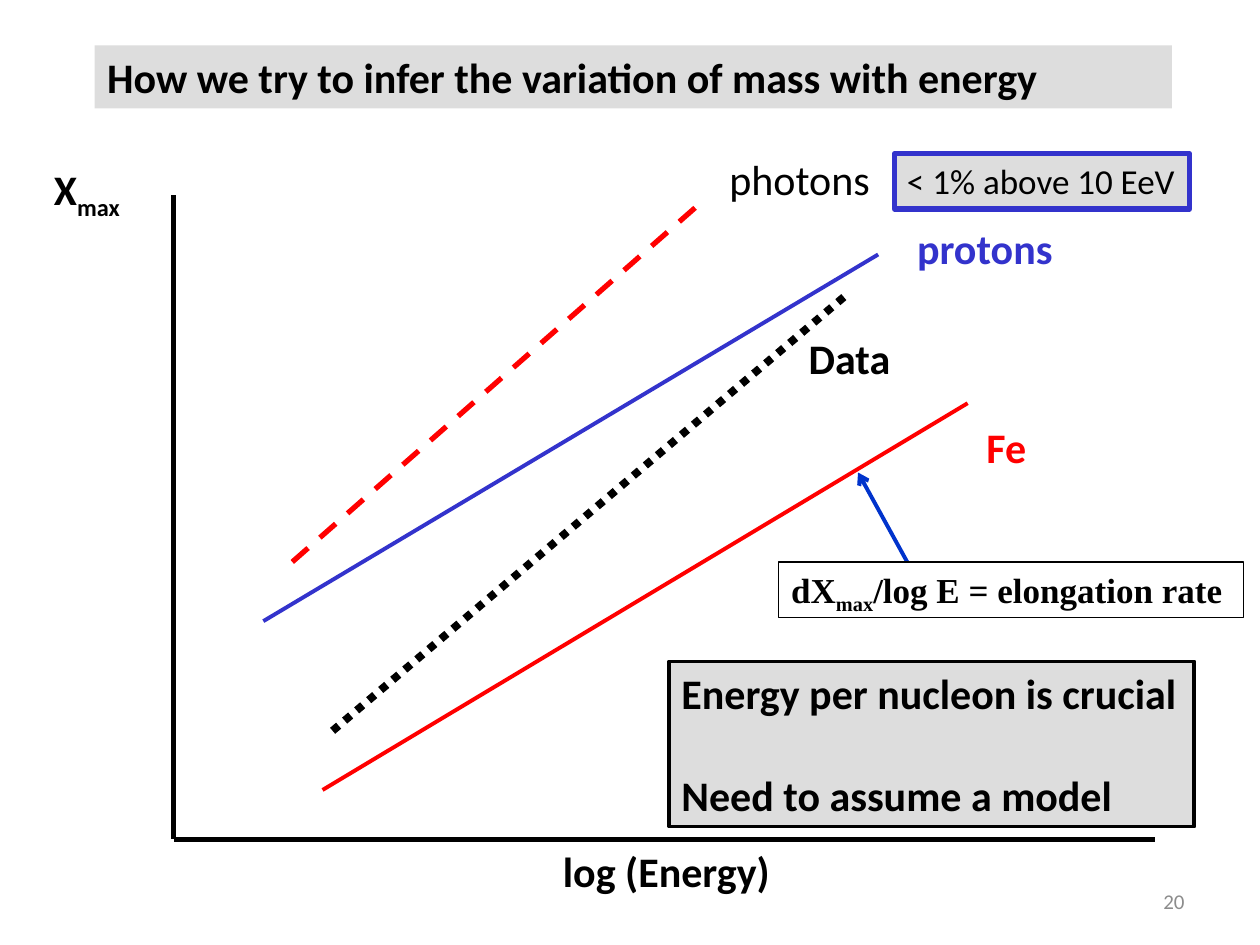
"""Build the slide on inferring the variation of mass with energy."""
from dataclasses import dataclass
from typing import Optional

from lxml import etree
from pptx import Presentation
from pptx import util as u
from pptx.dml.color import RGBColor
from pptx.enum import dml, shapes, text
from pptx.oxml.ns import qn

PX = 9144
COLORS = {
    "black": "000000",
    "blue": "3333CC",
    "arrow": "0033CC",
    "red": "FF0000",
    "panel": "DDDDDD",
    "number": "8C8C8C",
}


@dataclass
class Line:
    start: tuple[int, int]
    end: tuple[int, int]
    color: str
    weight: float
    dash: Optional[dml.MSO_LINE] = None
    arrow: bool = False


@dataclass
class Label:
    box: tuple[int, int, int, int]
    paragraphs: list[list[str]]
    color: str = "black"
    size: int = 24
    bold: bool = True
    font: str = "Calibri"
    fill: Optional[str] = None
    border: Optional[str] = None
    weight: float = 0
    wrap: bool = False
    gap: float = 0
    align: text.PP_ALIGN = text.PP_ALIGN.LEFT
    anchor: text.MSO_ANCHOR = text.MSO_ANCHOR.TOP


TITLE = Label((75, 36, 855, 50),
              [["How we try to infer the variation of mass with energy"]],
              fill="panel", wrap=True)

LINES = [
    Line((138, 155), (138, 666), "black", 3),
    Line((138, 666), (917, 666), "black", 3),
    Line((209, 493), (697, 202), "blue", 2.25),
    Line((256, 627), (768, 320), "red", 2.25),
    Line((264, 580), (673, 233), "black", 4.5, dml.MSO_LINE.ROUND_DOT),
    Line((232, 446), (555, 162), "red", 3, dml.MSO_LINE.DASH),
    Line((720, 446), (681, 375), "arrow", 2.25, arrow=True),
]

LABELS = [
    Label((717, 695, 233, 40), [["20"]], "number", 12, False, wrap=True,
          align=text.PP_ALIGN.RIGHT, anchor=text.MSO_ANCHOR.MIDDLE),
    Label((569, 117, 139, 50), [["photons"]], bold=False),
    Label((718, 172, 144, 50), [["protons"]], "blue"),
    Label((773, 330, 59, 50), [["Fe"]], "red"),
    Label((632, 259, 93, 50), [["Data"]]),
    Label((437, 666, 214, 50), [["log (Energy)"]]),
    Label((33, 125, 87, 50), [["X", "max"]]),
    Label((531, 525, 417, 131),
          [["Energy per nucleon is crucial"], ["Need to assume a model"]],
          fill="panel", border="black", weight=2.25, wrap=True, gap=29.3),
    Label((710, 122, 234, 44), [["< 1% above 10 EeV"]], size=20, bold=False,
          fill="panel", border="blue", weight=3),
    Label((618, 446, 369, 44), [["dX", "max", "/log E = elongation rate"]],
          size=20, font="Times New Roman", border="black", weight=0.75),
]


def rgb(name: str) -> RGBColor:
    """Look up a colour by name."""
    return RGBColor.from_string(COLORS[name])


def fill_label(sp, label: Label) -> None:
    """Place a shape, style it and write its text."""
    sp.left, sp.top, sp.width, sp.height = (v * PX for v in label.box)
    if label.fill:
        sp.fill.solid()
        sp.fill.fore_color.rgb = rgb(label.fill)
    if label.border:
        sp.line.color.rgb = rgb(label.border)
        sp.line.width = u.Pt(label.weight)
    tf = sp.text_frame
    tf.word_wrap = label.wrap
    tf.auto_size = (text.MSO_AUTO_SIZE.NONE if label.wrap
                    else text.MSO_AUTO_SIZE.SHAPE_TO_FIT_TEXT)
    tf.vertical_anchor = label.anchor
    for i, runs in enumerate(label.paragraphs):
        p = tf.add_paragraph() if i else tf.paragraphs[0]
        p.alignment = label.align
        p.space_before = u.Pt(label.gap if i else 0)
        for words in runs:
            r = p.add_run()
            r.text = words
            r.font.name = label.font
            r.font.size = u.Pt(label.size)
            r.font.bold = label.bold
            r.font.color.rgb = rgb(label.color)
            if words == "max":
                r.font._element.set("baseline", "-25000")


def draw_label(s, label: Label) -> None:
    """Add a text box, or a rectangle when it is filled or outlined."""
    box = [v * PX for v in label.box]
    if label.fill or label.border:
        sp = s.shapes.add_shape(shapes.MSO_SHAPE.RECTANGLE, *box)
        sp.shadow.inherit = False
        sp.fill.background()
    else:
        sp = s.shapes.add_textbox(*box)
    fill_label(sp, label)


def draw_line(s, line: Line) -> None:
    """Add a straight connector with its dash and arrowhead."""
    ends = [v * PX for v in line.start + line.end]
    c = s.shapes.add_connector(shapes.MSO_CONNECTOR.STRAIGHT, *ends)
    c.line.color.rgb = rgb(line.color)
    c.line.width = u.Pt(line.weight)
    if line.dash:
        c.line.dash_style = line.dash
    if line.arrow:
        etree.SubElement(c.line._get_or_add_ln(), qn("a:tailEnd"), type="arrow")
    etree.SubElement(c._element.spPr, qn("a:effectLst"))


def main() -> None:
    """Assemble the slide and save it."""
    prs = Presentation()
    prs.slide_width, prs.slide_height = 1000 * PX, 750 * PX
    s = prs.slides.add_slide(prs.slide_layouts[5])
    fill_label(s.shapes.title, TITLE)
    for line in LINES:
        draw_line(s, line)
    for label in LABELS:
        draw_label(s, label)
    prs.save("out.pptx")


if __name__ == "__main__":
    main()
